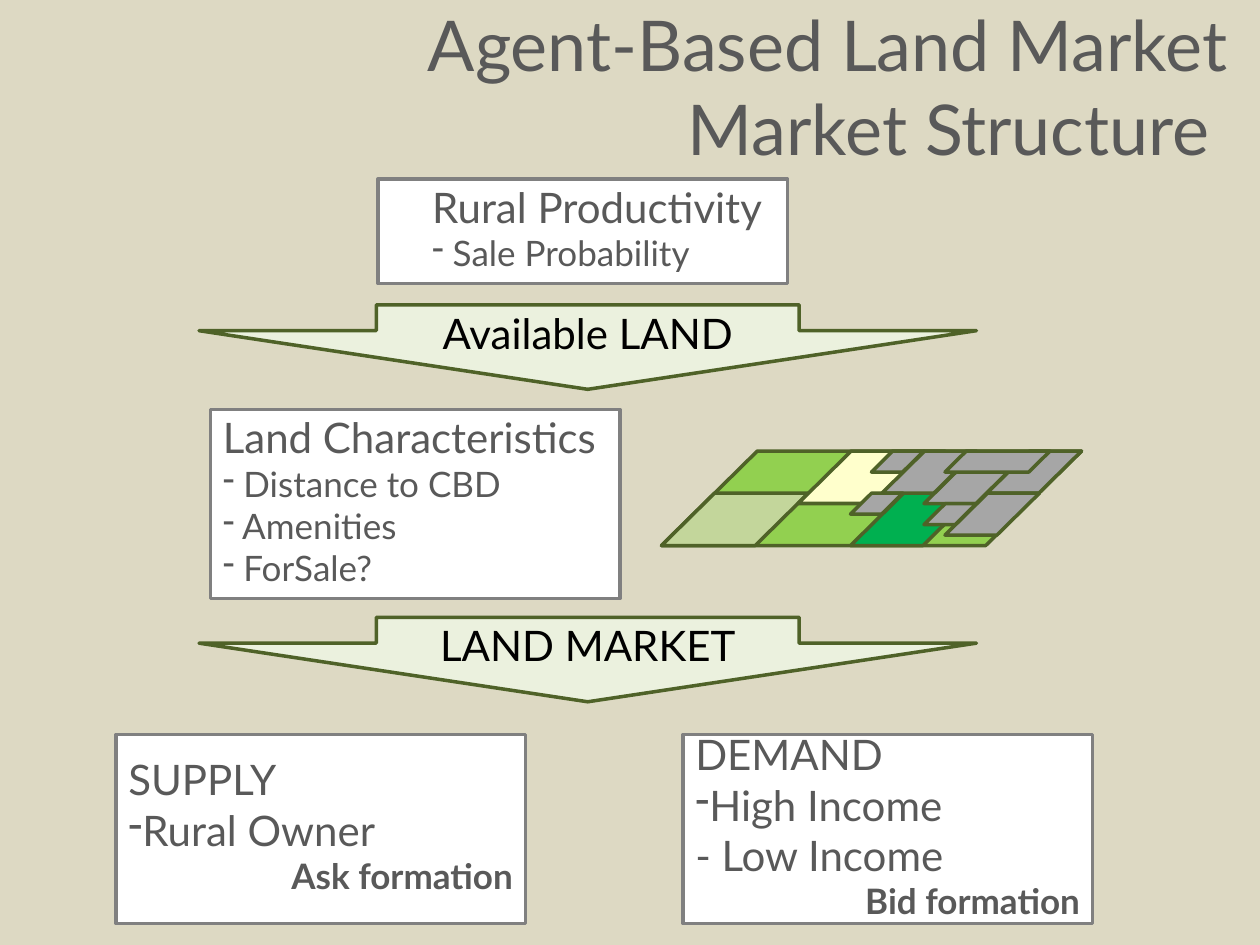
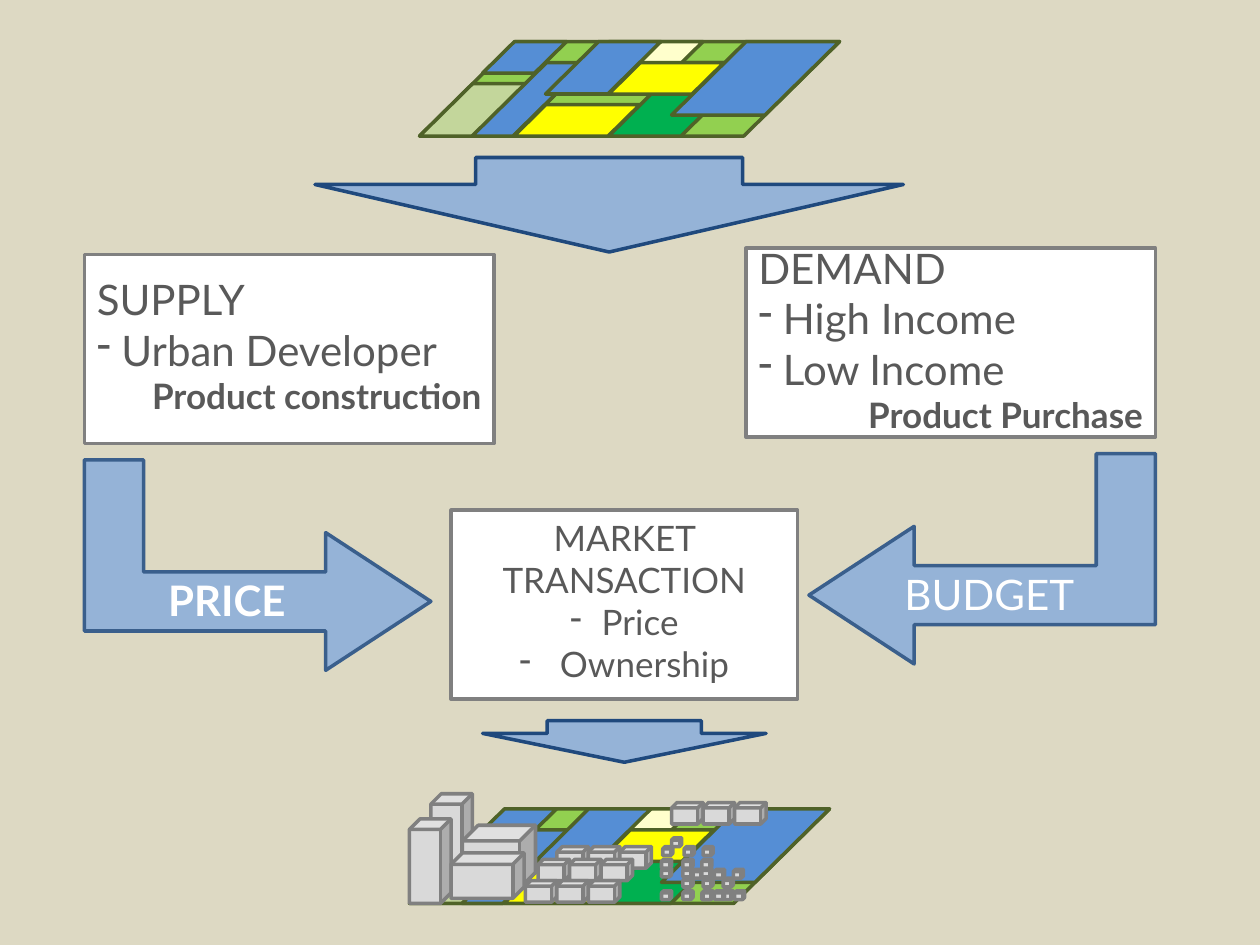
from lxml import etree
from pptx import Presentation
from pptx.dml.color import RGBColor
from pptx.enum.shapes import MSO_SHAPE
from pptx.enum.text import MSO_ANCHOR, MSO_AUTO_SIZE, PP_ALIGN
from pptx.oxml.ns import qn
from pptx.util import Inches, Pt

RECT, CUBE = MSO_SHAPE.RECTANGLE, MSO_SHAPE.CUBE
TILE, DOWN, BENT = MSO_SHAPE.PARALLELOGRAM, MSO_SHAPE.DOWN_ARROW, MSO_SHAPE.BENT_UP_ARROW
MIDDLE, NO_FIT = MSO_ANCHOR.MIDDLE, MSO_AUTO_SIZE.NONE
LEFT, CENTER, RIGHT = PP_ALIGN.LEFT, PP_ALIGN.CENTER, PP_ALIGN.RIGHT

SAND = RGBColor(0xDD, 0xD9, 0xC3)
WHITE = RGBColor(0xFF, 0xFF, 0xFF)
BLACK = RGBColor(0, 0, 0)
TEXT = RGBColor(0x59, 0x59, 0x59)
EDGE = RGBColor(0x80, 0x80, 0x80)
WALL = RGBColor(0xD9, 0xD9, 0xD9)
OLIVE = RGBColor(0x4F, 0x62, 0x28)
MINT = RGBColor(0xEB, 0xF1, 0xDE)
GRASS = RGBColor(0x92, 0xD0, 0x50)
SAGE = RGBColor(0xC3, 0xD6, 0x9B)
CREAM = RGBColor(0xFF, 0xFF, 0xCC)
GREEN = RGBColor(0x00, 0xB0, 0x50)
GRAY = RGBColor(0xA6, 0xA6, 0xA6)
BLUE = RGBColor(0x55, 0x8E, 0xD5)
GOLD = RGBColor(0xFF, 0xFF, 0x00)
SKY = RGBColor(0x95, 0xB3, 0xD7)
NAVY = RGBColor(0x1F, 0x49, 0x7D)
STEEL = RGBColor(0x3A, 0x5F, 0x8C)

FONT = "Lato"
UNIT = 1 / 12
BASE = [(0, 0, 40, 9, GRASS), (0, 4, 14, 5, SAGE), (13, 0, 14, 5, CREAM),
        (18, 2, 14, 7, GREEN)]
BUILT = [(x, y, w, h, GRAY) for x, y, w, h in (
    (20, 0, 5, 2), (31, 0, 9, 4), (25, 1, 9, 4), (27, 4, 9, 4),
    (21, 0, 9, 4), (25, 5, 5, 2), (18, 4, 5, 2), (27, 0, 10, 2))]
LOTS = [(6, 0, 8, 3, BLUE), (5, 2, 11, 7, BLUE), (24, 0, 16, 7, BLUE),
        (12, 0, 11, 5, BLUE), (18, 2, 11, 3, GOLD), (9, 6, 12, 3, GOLD)]
TOWERS = [(0.17, -0.12, 0.33, 0.67), (0, 0.08, 0.33, 0.67),
          (0.42, 0.13, 0.58, 0.5), (0.33, 0.35, 0.58, 0.36)]
ROWS = [(1.17, 0.3), (1.02, 0.4), (0.92, 0.57), (2.08, -0.05)]
HUTS = [(0.48, (2.25, 2.42, 2.57)), (0.55, (2.17, 2.33, 2.49)),
        (0.65, (2, 2.32)), (0.47, (2, 2.17, 2.32)),
        (0.65, (2.17, 2.33, 2.49)), (0.3, (2.01, 2.18, 2.33)),
        (0.4, (2, 2.17, 2.32)), (0.65, (2.42, 2.58)), (0.23, (2.08,))]


def draw(slide, kind, box, fill, line, adjust=()):
    shape = slide.shapes.add_shape(kind, *map(Inches, box))
    shape.shadow.inherit = False
    shape.fill.solid()
    shape.fill.fore_color.rgb = fill
    shape.line.color.rgb = line
    shape.line.width = Pt(2)
    for i, value in enumerate(adjust):
        shape.adjustments[i] = value
    return shape


def style(para, size, color=TEXT, align=LEFT, bold=False):
    para.alignment = align
    font = para.font
    font.name, font.size, font.bold = FONT, Pt(size), bold
    font.color.rgb = color


def dash(para, indent=0):
    props = para._p.get_or_add_pPr()
    props.set("marL", str(Inches(indent)))
    props.set("indent", str(-Inches(indent)))
    mark = etree.Element(qn("a:buChar"), char="-")
    props.insert_element_before(mark, "a:tabLst", "a:defRPr", "a:extLst")


def card(slide, box, lines, left=0.1, indent=0):
    frame = draw(slide, RECT, box, WHITE, EDGE).text_frame
    frame.word_wrap = True
    frame.vertical_anchor = MIDDLE
    frame.margin_left = Inches(left)
    frame.margin_bottom = Inches(0.11)
    frame.text = "\n".join(line[0] for line in lines)
    for para, (_, size, align, mark) in zip(frame.paragraphs, lines):
        style(para, size, align=align, bold=align == RIGHT)
        if mark:
            dash(para, indent)


def head(text, size=24, align=LEFT):
    return text, size, align, False


def item(text, size=24, align=LEFT):
    return text, size, align, True


def act(text):
    return text, 20, RIGHT, False


def label(slide, box, text, color, align=CENTER, bold=False):
    frame = slide.shapes.add_textbox(*map(Inches, box)).text_frame
    frame.word_wrap = True
    frame.vertical_anchor = MIDDLE
    frame.text = text
    style(frame.paragraphs[0], 24, color, align, bold)


def stage(slide, left, top, text):
    draw(slide, DOWN, (left, top, 6.17, 0.67), MINT, OLIVE, (0.544, 0.694))
    label(slide, (left + 1.5, top, 3.17, 0.44), text, BLACK)


def bend(slide, left, top, angle, flips):
    wide, high = 2.75, 1.67
    shift = (wide - high) / 2
    box = (left + shift, top - shift, high, wide)
    arrow = draw(slide, BENT, box, SKY, STEEL, (0.281, 0.327, 0.5))
    arrow.rotation = angle
    for flip in flips:
        arrow.element.spPr.find(qn("a:xfrm")).set(flip, "1")


def land(slide, left, top, tiles):
    for x, y, w, h, fill in BASE + tiles:
        box = (left + x * UNIT, top + y * UNIT, w * UNIT, h * UNIT)
        draw(slide, TILE, box, fill, OLIVE, (1.014,))


def town(slide, left, top):
    blocks = TOWERS + [(x + i * 0.25, y, 0.25, 0.17) for x, y in ROWS for i in range(3)]
    blocks += [(x, y, 0.08, 0.07) for y, row in HUTS for x in row]
    for x, y, w, h in blocks:
        draw(slide, CUBE, (left + x, top + y, w, h), WALL, EDGE)


def title(slide, box, text):
    shape = slide.shapes.title
    shape.left, shape.top, shape.width, shape.height = map(Inches, box)
    frame = shape.text_frame
    frame.auto_size = NO_FIT
    frame.vertical_anchor = MIDDLE
    frame.text = text
    for para in frame.paragraphs:
        style(para, 40, align=RIGHT)


def market(slide):
    title(slide, (0.17, 0.17, 9.67, 1.02), "Agent-Based Land Market\nMarket Structure ")
    card(slide, (3, 1.42, 3.25, 0.83),
         [head("Rural Productivity"), item(" Sale Probability", 20)], left=0.43)
    stage(slide, 1.58, 2.42, "Available LAND")
    card(slide, (1.67, 3.25, 3.25, 1.5),
         [head("Land Characteristics"), item(" Distance to CBD", 20),
          item(" Amenities", 20), item(" ForSale?", 20)])
    land(slide, 5.25, 3.58, BUILT)
    stage(slide, 1.58, 4.9, "LAND MARKET")
    card(slide, (0.92, 5.83, 3.25, 1.5),
         [head("SUPPLY"), item("Rural Owner"), act("Ask formation")])
    card(slide, (5.42, 5.83, 3.25, 1.5),
         [head("DEMAND"), item("High Income"), head("- Low Income"), act("Bid formation")])


def trade(slide):
    land(slide, 3.33, 0.33, LOTS)
    draw(slide, DOWN, (2.5, 1.25, 4.67, 0.75), SKY, NAVY, (0.454, 0.714))
    card(slide, (0.67, 2.02, 3.25, 1.5),
         [head("SUPPLY"), item(" Urban Developer"), act("Product construction")])
    card(slide, (5.92, 1.97, 3.25, 1.5),
         [head("DEMAND"), item(" High Income"), item(" Low Income"), act("Product Purchase")])
    card(slide, (3.58, 4.05, 2.75, 1.5),
         [head("MARKET TRANSACTION", 20, CENTER), item("Price", 20, CENTER),
          item(" Ownership", 20, CENTER)], indent=0.25)
    bend(slide, 6.42, 3.6, 90, ["flipV"])
    label(slide, (7.08, 4.49, 1.85, 0.44), "BUDGET", WHITE, LEFT)
    bend(slide, 0.67, 3.65, 270, ["flipH", "flipV"])
    label(slide, (1.1, 4.54, 1.4, 0.44), "PRICE", WHITE, bold=True)
    draw(slide, DOWN, (3.83, 5.72, 2.25, 0.33), SKY, NAVY, (0.544, 0.694))
    land(slide, 3.25, 6.42, LOTS)
    town(slide, 3.25, 6.42)


def main():
    deck = Presentation()
    deck.slide_width, deck.slide_height = Inches(10), Inches(7.5)
    back = deck.slide_master.background.fill
    back.solid()
    back.fore_color.rgb = SAND
    market(deck.slides.add_slide(deck.slide_layouts[5]))
    trade(deck.slides.add_slide(deck.slide_layouts[6]))
    deck.save("out.pptx")


if __name__ == "__main__":
    main()
